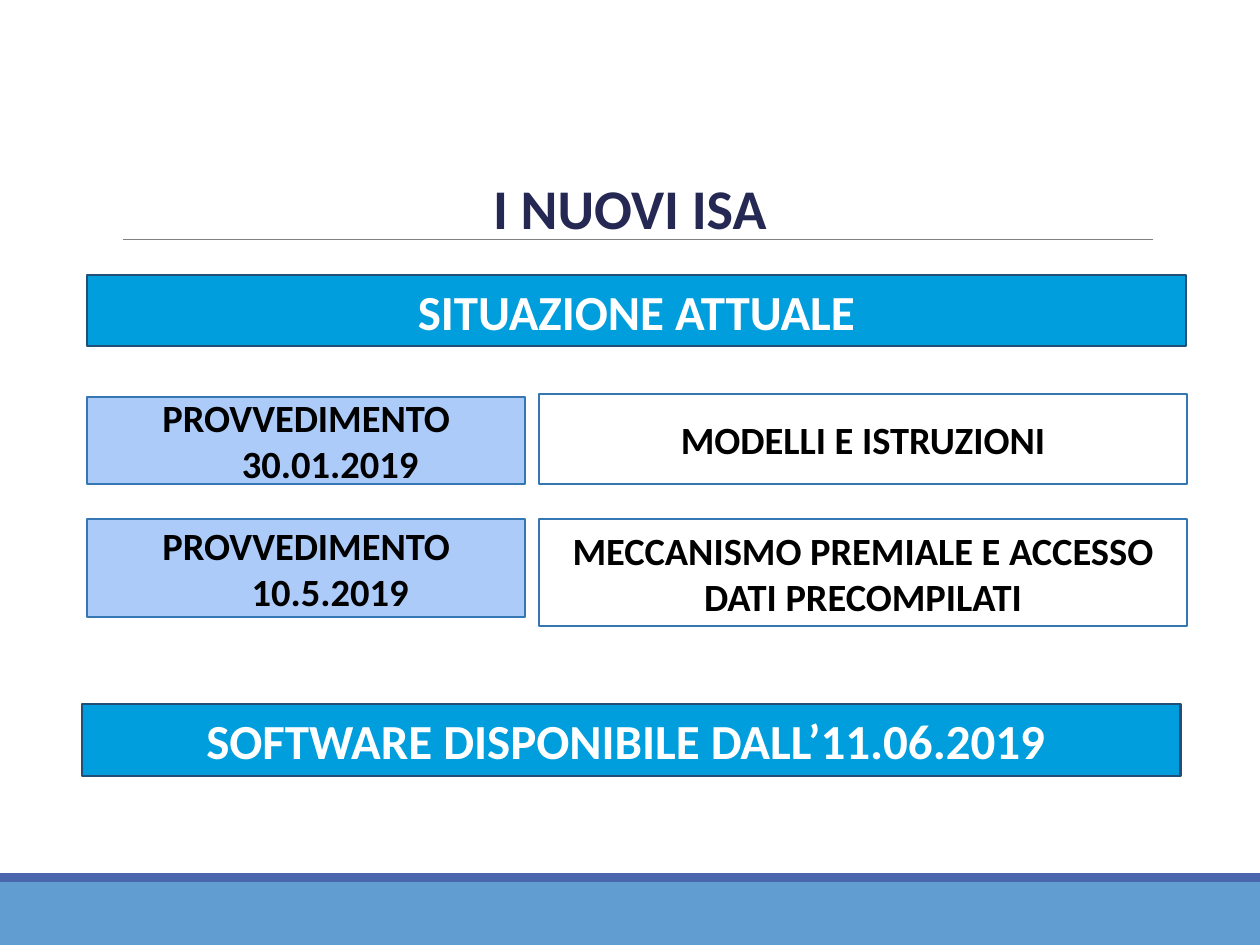
from dataclasses import dataclass
from typing import Optional

from lxml import etree
from pptx import Presentation
from pptx.dml.color import RGBColor
from pptx.enum.shapes import MSO_CONNECTOR, MSO_SHAPE
from pptx.enum.text import MSO_ANCHOR, PP_ALIGN
from pptx.oxml.ns import qn
from pptx.util import Inches, Pt


@dataclass
class Style:
    fill: str
    line: Optional[str] = None
    color: str = "000000"
    size: int = 22
    hanging: float = 0


@dataclass
class Box:
    left: float
    top: float
    width: float
    height: float
    style: Style
    text: str = ""


BANNER = Style("009EDC", "234F77", "FFFFFF", 28)
MEASURE = Style("ACCBF9", "3477B2", hanging=0.38)
CONTENT = Style("FFFFFF", "3477B2")

LEFT, MEASURE_W = 0.69, 3.48
CONTENT_LEFT, CONTENT_W = 4.28, 5.14
BANNER_W, BANNER_H = 8.72, 0.57

BOXES = [
    Box(0, 7, 10, 0.5, Style("629DD1")),
    Box(0, 6.93, 10, 0.07, Style("4A66AC")),
    Box(LEFT, 2.18, BANNER_W, BANNER_H, BANNER, "SITUAZIONE ATTUALE"),
    Box(LEFT, 3.15, MEASURE_W, 0.69, MEASURE, "PROVVEDIMENTO 30.01.2019"),
    Box(CONTENT_LEFT, 3.13, CONTENT_W, 0.71, CONTENT, "MODELLI E ISTRUZIONI"),
    Box(LEFT, 4.12, MEASURE_W, 0.78, MEASURE, "PROVVEDIMENTO 10.5.2019"),
    Box(CONTENT_LEFT, 4.12, CONTENT_W, 0.85, CONTENT,
        "MECCANISMO PREMIALE E ACCESSO DATI PRECOMPILATI"),
    Box(0.65, 5.59, BANNER_W, BANNER_H, BANNER,
        "SOFTWARE DISPONIBILE DALL’11.06.2019 "),
]


def rgb(value: str) -> RGBColor:
    return RGBColor.from_string(value)


def write(shape, text: str, size: int, color: str, hanging: float = 0) -> None:
    """Put one bold, centred paragraph in the shape."""
    tf = shape.text_frame
    tf.word_wrap = True
    tf.vertical_anchor = MSO_ANCHOR.MIDDLE
    p = tf.paragraphs[0]
    p.text = text
    p.alignment = PP_ALIGN.CENTER
    p.font.name = "Calibri"
    p.font.size = Pt(size)
    p.font.bold = True
    p.font.color.rgb = rgb(color)
    if hanging:
        pPr = p._p.get_or_add_pPr()
        pPr.set("marL", str(Inches(hanging)))
        pPr.set("indent", str(-Inches(hanging)))


def draw_box(s, box: Box) -> None:
    sp = s.shapes.add_shape(MSO_SHAPE.RECTANGLE, Inches(box.left), Inches(box.top),
                            Inches(box.width), Inches(box.height))
    style = box.style
    sp.shadow.inherit = False
    sp.fill.solid()
    sp.fill.fore_color.rgb = rgb(style.fill)
    if style.line:
        sp.line.color.rgb = rgb(style.line)
        sp.line.width = Pt(1.25)
    else:
        sp.line.fill.background()
    if box.text:
        write(sp, box.text, style.size, style.color, style.hanging)


def draw_title(s) -> None:
    rule = s.shapes.add_connector(MSO_CONNECTOR.STRAIGHT, Inches(0.98), Inches(1.9),
                                  Inches(9.15), Inches(1.9))
    rule.line.color.rgb = rgb("808080")
    rule.line.width = Pt(0.5)
    etree.SubElement(rule._element.spPr, qn("a:effectLst"))
    title = s.shapes.add_textbox(0, Inches(1.34), Inches(10), Inches(0.6))
    write(title, "I NUOVI ISA", 32, "242852")


def main() -> None:
    prs = Presentation()
    prs.slide_width, prs.slide_height = Inches(10), Inches(7.5)
    s = prs.slides.add_slide(prs.slide_layouts[6])
    draw_title(s)
    for box in BOXES:
        draw_box(s, box)
    prs.save("out.pptx")


if __name__ == "__main__":
    main()
